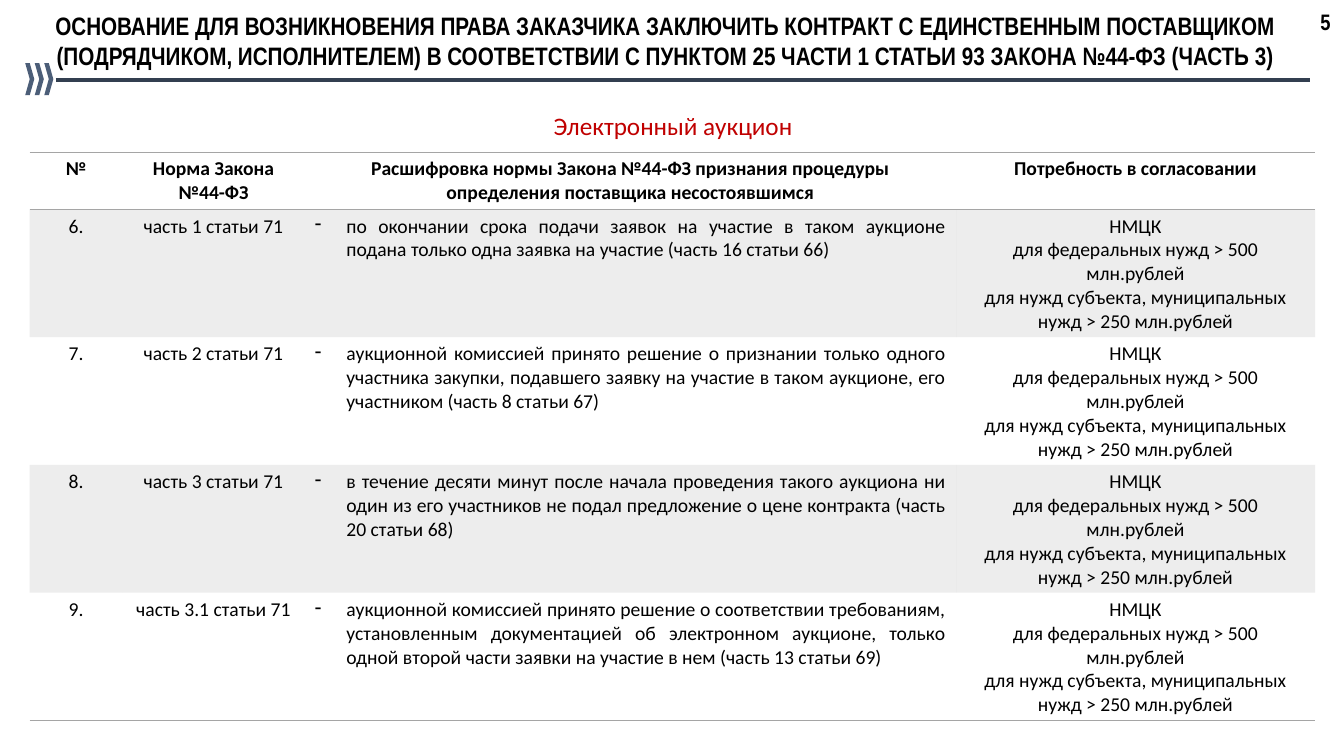
import pptx
import pptx.util
import pptx.dml.color
import pptx.enum.shapes
import pptx.enum.text
import pptx.oxml
import pptx.oxml.ns
import lxml.etree

Pt = pptx.util.Pt
ALIGN = pptx.enum.text.PP_ALIGN
qn = pptx.oxml.ns.qn

COLORS = {
    "text": "000000",
    "accent": "C00000",
    "rule": "333F50",
    "chevron": "4C5E78",
    "grid": "A5A5A5",
}
NO_STYLE = "{2D5ABB26-0587-4C30-8999-92F81FD0307C}"


class SlideBuilder:
    heading_font = "Arial Narrow"
    body_font = "Calibri"

    def __init__(self, slide):
        self.slide = slide

    def rgb(self, name):
        return pptx.dml.color.RGBColor.from_string(COLORS[name])

    def style(self, paragraph, size, font, color="text", bold=False, align=ALIGN.CENTER):
        paragraph.alignment = align
        paragraph.font.size = Pt(size)
        paragraph.font.name = font
        paragraph.font.bold = bold
        paragraph.font.color.rgb = self.rgb(color)

    def text(self, left, top, width, height, words, size, font, **style):
        box = self.slide.shapes.add_textbox(Pt(left), Pt(top), Pt(width), Pt(height))
        frame = box.text_frame
        frame.word_wrap = True
        frame.auto_size = pptx.enum.text.MSO_AUTO_SIZE.SHAPE_TO_FIT_TEXT
        frame.text = words
        self.style(frame.paragraphs[0], size, font, **style)

    def line(self, start, end, y, weight):
        rule = self.slide.shapes.add_connector(
            pptx.enum.shapes.MSO_CONNECTOR.STRAIGHT, Pt(start), Pt(y), Pt(end), Pt(y))
        rule.line.color.rgb = self.rgb("rule")
        rule.line.width = Pt(weight)
        lxml.etree.SubElement(rule._element.spPr, qn("a:effectLst"))

    def chevron(self, left, top, width, height):
        mark = self.slide.shapes.add_shape(
            pptx.enum.shapes.MSO_SHAPE.CHEVRON, Pt(left), Pt(top), Pt(width), Pt(height))
        mark.shadow.inherit = False
        mark.fill.solid()
        mark.fill.fore_color.rgb = self.rgb("chevron")
        mark.line.fill.background()

    def border(self, cell, side):
        edge = lxml.etree.SubElement(cell._tc.get_or_add_tcPr(), qn(f"a:{side}"), w=str(Pt(1)))
        fill = lxml.etree.SubElement(edge, qn("a:solidFill"))
        lxml.etree.SubElement(fill, qn("a:srgbClr"), val=COLORS["grid"])

    def shade(self, cell, shaded):
        if not shaded:
            cell.fill.background()
            return
        cell.fill.solid()
        cell.fill.fore_color.rgb = self.rgb("grid")
        color = cell._tc.tcPr.find(f"{qn('a:solidFill')}/{qn('a:srgbClr')}")
        lxml.etree.SubElement(color, qn("a:alpha"), val="20000")

    def dash(self, paragraph, indent):
        props = paragraph._p.get_or_add_pPr()
        props.set("marL", str(Pt(indent)))
        props.set("indent", str(-Pt(indent)))
        lxml.etree.SubElement(props, qn("a:buChar"), char="-")

    def table(self, left, top, widths, heights, rows, dash_column):
        frame = self.slide.shapes.add_table(
            len(rows), len(widths), Pt(left), Pt(top), Pt(sum(widths)), Pt(sum(heights)))
        grid = frame.table
        grid.horz_banding = False
        grid._tbl.tblPr.find(qn("a:tableStyleId")).text = NO_STYLE
        for column, width in zip(grid.columns, widths):
            column.width = Pt(width)
        for r, values in enumerate(rows):
            grid.rows[r].height = Pt(heights[r])
            header = r == 0
            for c, value in enumerate(values):
                cell = grid.cell(r, c)
                cell.text = value
                dashed = c == dash_column and not header
                for paragraph in cell.text_frame.paragraphs:
                    if dashed:
                        self.dash(paragraph, 22.5)
                    self.style(paragraph, 14, self.body_font, bold=header,
                               align=ALIGN.JUSTIFY if dashed else ALIGN.CENTER)
                if header:
                    self.border(cell, "lnT")
                if header or r == len(rows) - 1:
                    self.border(cell, "lnB")
                self.shade(cell, r % 2 == 1)


def main():
    deck = pptx.Presentation()
    deck.slide_width, deck.slide_height = Pt(960), Pt(540)
    page = SlideBuilder(deck.slides.add_slide(deck.slide_layouts[6]))

    page.text(24.5, 3.6, 901.5, 51,
              "ОСНОВАНИЕ ДЛЯ ВОЗНИКНОВЕНИЯ ПРАВА ЗАКАЗЧИКА ЗАКЛЮЧИТЬ КОНТРАКТ С ЕДИНСТВЕННЫМ "
              "ПОСТАВЩИКОМ (ПОДРЯДЧИКОМ, ИСПОЛНИТЕЛЕМ) В СООТВЕТСТВИИ С ПУНКТОМ 25 ЧАСТИ 1 "
              "СТАТЬИ 93 ЗАКОНА №44-ФЗ (ЧАСТЬ 3)",
              18, page.heading_font, bold=True)
    page.text(936, 2, 22, 26.6, "5", 16, page.heading_font, bold=True, align=ALIGN.LEFT)
    page.line(40, 936, 57, 2.75)
    for i in range(3):
        page.chevron(18 + 6.8 * i, 45, 6.5, 23)

    approval = ("НМЦК\nдля федеральных нужд > 500 млн.рублей\n"
                "для нужд субъекта, муниципальных нужд > 250 млн.рублей")
    grounds = [
        ("1", "по окончании срока подачи заявок на участие в таком аукционе подана только одна "
              "заявка на участие (часть 16 статьи 66)"),
        ("2", "аукционной комиссией принято решение о признании только одного участника закупки, "
              "подавшего заявку на участие в таком аукционе, его участником (часть 8 статьи 67)"),
        ("3", "в течение десяти минут после начала проведения такого аукциона ни один из его "
              "участников не подал предложение о цене контракта (часть 20 статьи 68)"),
        ("3.1", "аукционной комиссией принято решение о соответствии требованиям, установленным "
                "документацией об электронном аукционе, только одной второй части заявки на "
                "участие в нем (часть 13 статьи 69)"),
    ]
    rows = [("№", "Норма Закона №44-ФЗ",
             "Расшифровка нормы Закона №44-ФЗ признания процедуры определения поставщика "
             "несостоявшимся",
             "Потребность в согласовании")]
    for number, (part, ground) in enumerate(grounds, 6):
        rows.append((f"{number}.", f"часть {part} статьи 71", ground, approval))
    page.table(21.2, 108.7, [66.2, 130.3, 465.2, 256.5], [40.8] + [91.2] * 4, rows, 2)

    page.text(31.5, 75, 898.5, 29, "Электронный аукцион", 18, page.body_font, color="accent")
    deck.save("out.pptx")


if __name__ == "__main__":
    main()
